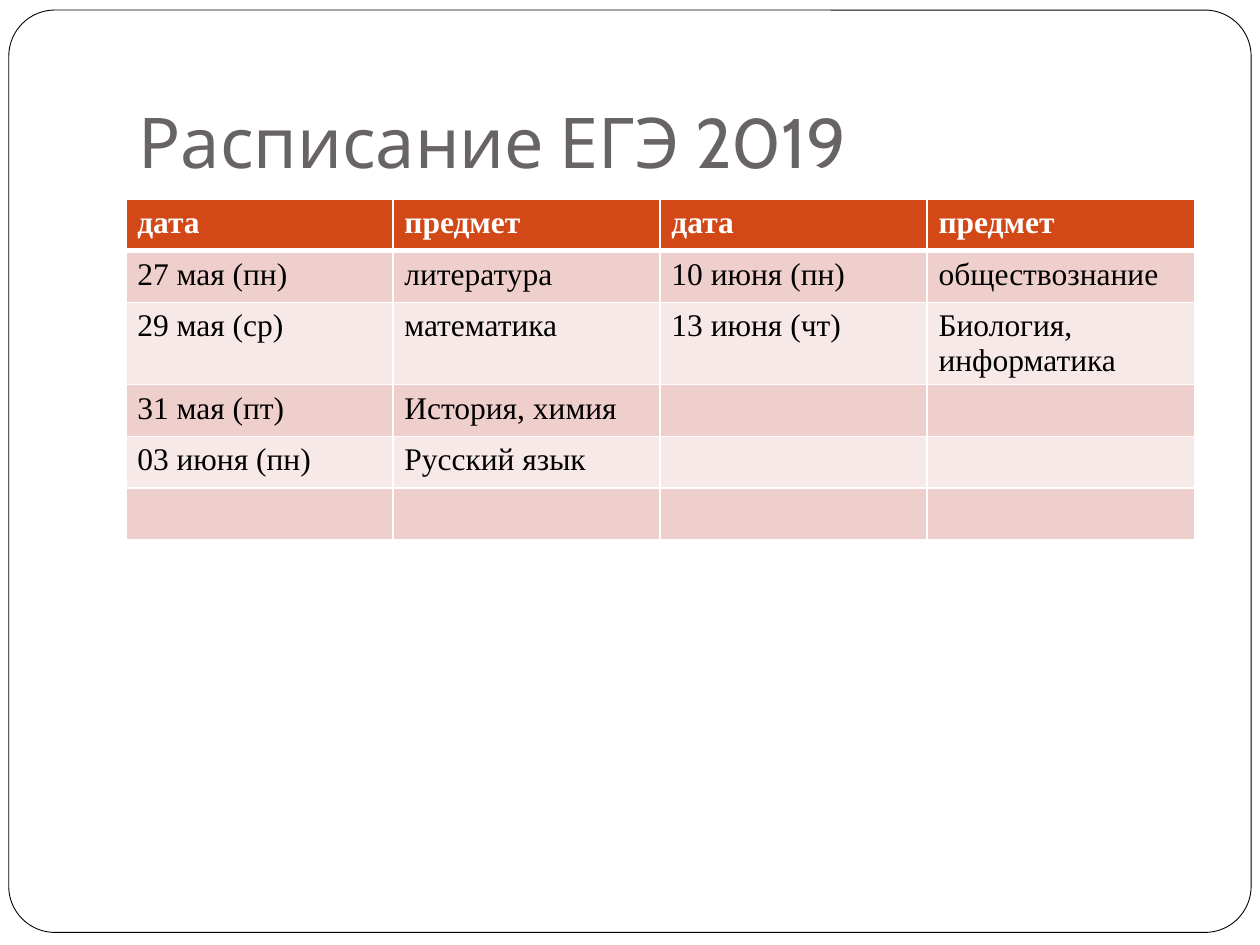
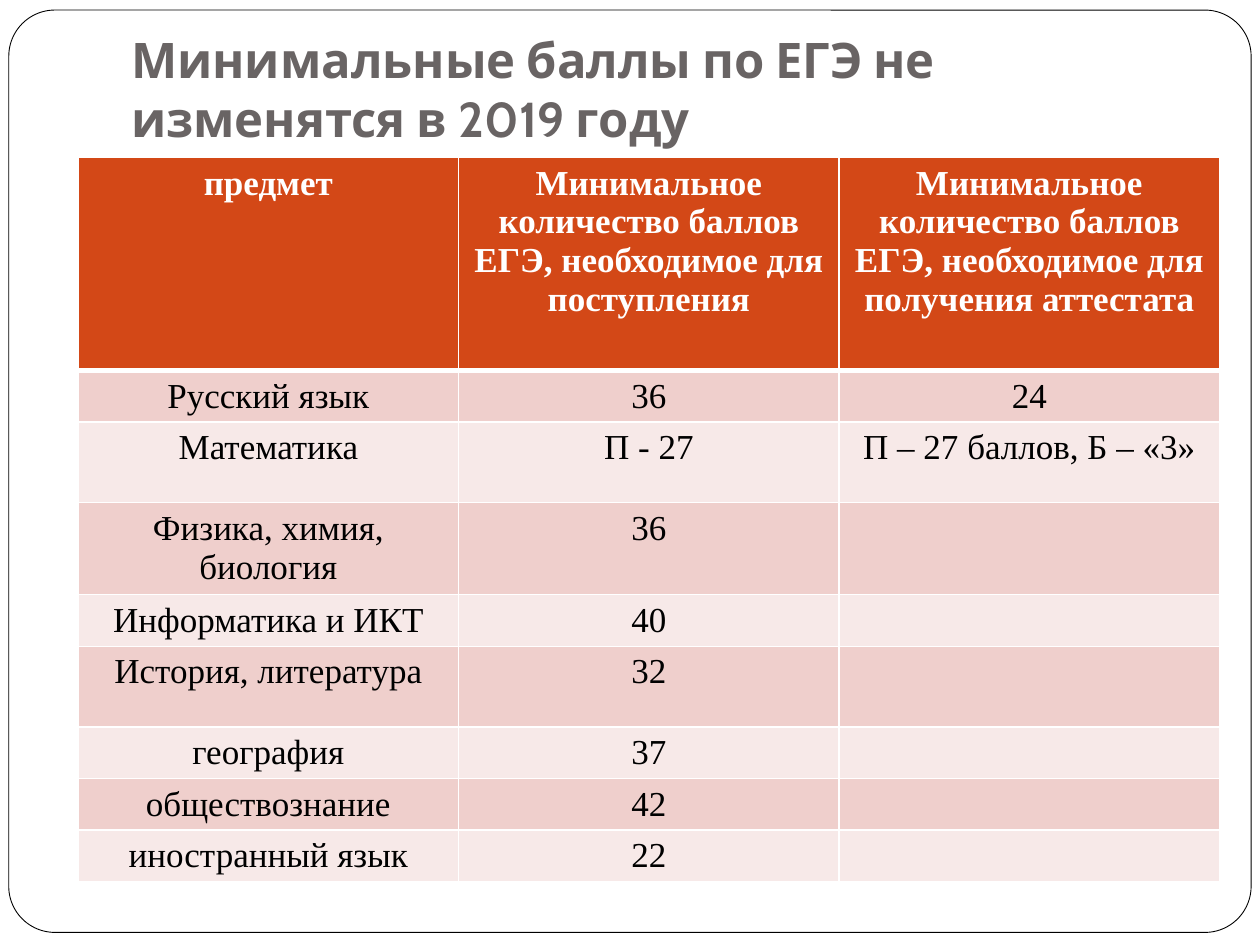
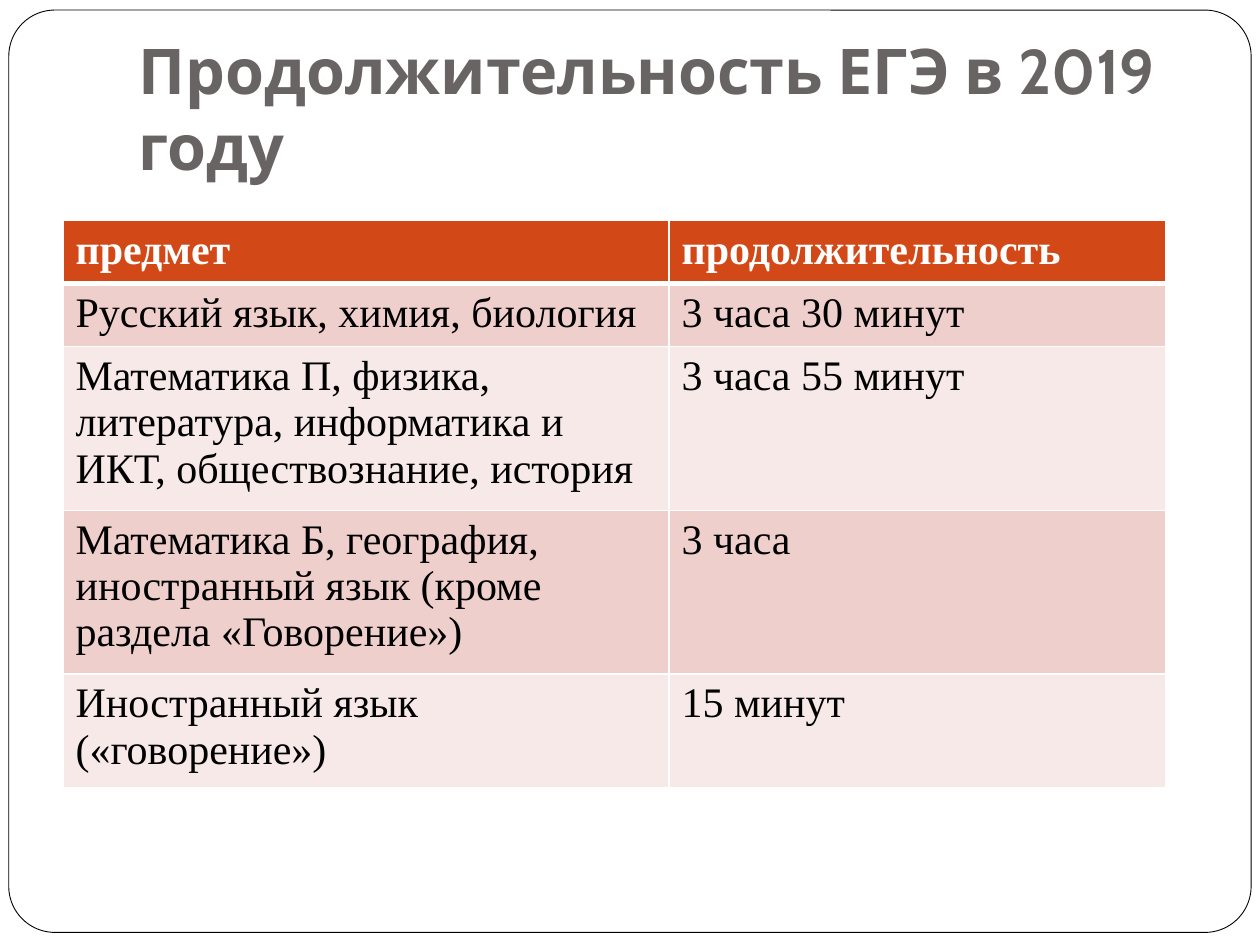
import pptx
import pptx.util
import pptx.dml.color
import pptx.enum.shapes
import pptx.enum.text
import pptx.oxml
import pptx.oxml.ns
from pptx.util import Inches

COLORS = {
    "white": "FFFFFF",
    "outline": "000000",
    "title": "696464",
    "header": "D34817",
    "band_dark": "EFCFCC",
    "band_light": "F7E9E8",
    "text": "000000",
}
TITLE_FONT = "Cabin"
TABLE_FONT = "Times New Roman"
LEFT = pptx.enum.text.PP_ALIGN.LEFT
CENTER = pptx.enum.text.PP_ALIGN.CENTER


def rgb(name):
    return pptx.dml.color.RGBColor.from_string(COLORS[name])


class Deck:
    """Shared style and the slide being built."""

    def __init__(self):
        self.prs = pptx.Presentation()
        self.prs.slide_width = Inches(10)
        self.prs.slide_height = Inches(7.5)
        self.slide = None

    def new_slide(self):
        self.slide = self.prs.slides.add_slide(self.prs.slide_layouts[5])
        self.frame()

    def frame(self):
        """Rounded outline behind everything else."""
        frame = self.slide.shapes.add_shape(
            pptx.enum.shapes.MSO_SHAPE.ROUNDED_RECTANGLE,
            Inches(0.07), Inches(0.08), Inches(9.86), Inches(7.32))
        frame.adjustments[0] = 0.05
        frame.shadow.inherit = False
        frame.fill.solid()
        frame.fill.fore_color.rgb = rgb("white")
        frame.line.color.rgb = rgb("outline")
        frame.line.width = pptx.util.Pt(0.5)
        frame.element.getparent().insert(2, frame.element)

    def style_text(self, paragraph, font, size, color, bold, align):
        paragraph.alignment = align
        for run in paragraph.runs:
            run.font.name = font
            run.font.size = pptx.util.Pt(size)
            run.font.bold = bold
            run.font.color.rgb = rgb(color)

    def title(self, text, size, bold=True, box=(1, 0.3, 8.5, 1.25)):
        title = self.slide.shapes.title
        title.left, title.top, title.width, title.height = map(Inches, box)
        body = title.text_frame
        body.text = text
        body.word_wrap = True
        body.auto_size = pptx.enum.text.MSO_AUTO_SIZE.NONE
        body.vertical_anchor = pptx.enum.text.MSO_ANCHOR.BOTTOM
        body.margin_left = body.margin_right = body.margin_bottom = Inches(0.1)
        body.margin_top = Inches(0.05)
        self.style_text(body.paragraphs[0], TITLE_FONT, size, "title", bold, LEFT)

    def borders(self, cell, top, bottom):
        """White cell borders, widths in points."""
        properties = cell._tc.get_or_add_tcPr()
        for side, width in (("L", 1), ("R", 1), ("T", top), ("B", bottom)):
            properties.append(pptx.oxml.parse_xml(
                f'<a:ln{side} {pptx.oxml.ns.nsdecls("a")} w="{pptx.util.Pt(width)}">'
                f'<a:solidFill><a:srgbClr val="{COLORS["white"]}"/></a:solidFill>'
                f'</a:ln{side}>'))

    def table(self, rows, left, top, widths, heights, size, align=LEFT, margin=0.09):
        """Header row and alternating bands; short rows are left blank at the end."""
        table = self.slide.shapes.add_table(
            len(rows), len(widths), Inches(left), Inches(top),
            Inches(sum(widths)), Inches(sum(heights))).table
        for column, width in zip(table.columns, widths):
            column.width = Inches(width)
        for r, (row, height) in enumerate(zip(rows, heights)):
            table.rows[r].height = Inches(height)
            header = r == 0
            fill = "header" if header else "band_dark" if r % 2 else "band_light"
            for c in range(len(widths)):
                cell = table.cell(r, c)
                self.borders(cell, 3 if r == 1 else 1, 3 if header else 1)
                cell.fill.solid()
                cell.fill.fore_color.rgb = rgb(fill)
                cell.margin_left = cell.margin_right = Inches(margin)
                cell.margin_top = cell.margin_bottom = Inches(0.05)
                if c < len(row):
                    cell.text_frame.text = row[c]
                    self.style_text(cell.text_frame.paragraphs[0], TABLE_FONT, size,
                                    "white" if header else "text", header, align)


def main():
    deck = Deck()

    # Exam timetable
    deck.new_slide()
    deck.title("Расписание ЕГЭ 2019", 40, bold=False)
    timetable = [
        ("дата", "предмет", "дата", "предмет"),
        ("27 мая (пн)", "литература", "10 июня (пн)", "обществознание"),
        ("29 мая (ср)", "математика", "13 июня (чт)", "Биология, информатика"),
        ("31 мая (пт)", "История, химия"),
        ("03 июня (пн)", "Русский язык"),
        (),
    ]
    deck.table(timetable, 1, 1.58, [2.12] * 4, [0.41] * 6, 18)

    # Minimum scores
    deck.new_slide()
    deck.title("Минимальные баллы по ЕГЭ не изменятся в 2019 году", 28,
               box=(0.94, 0.16, 8.5, 1.11))
    needed = "Минимальное количество баллов ЕГЭ, необходимое для "
    minimum_scores = [
        ("предмет", needed + "поступления", needed + "получения аттестата"),
        ("Русский язык", "36", "24"),
        ("Математика", "П - 27", "П – 27 баллов, Б – «3»"),
        ("Физика, химия, биология", "36"),
        ("Информатика и ИКТ", "40"),
        ("История, литература", "32"),
        ("география", "37"),
        ("обществознание", "42"),
        ("иностранный язык", "22"),
    ]
    deck.table(minimum_scores, 0.62, 1.25, [3.02] * 3,
               [1.69, 0.41, 0.64, 0.73, 0.41, 0.64] + [0.41] * 3, 20, CENTER)

    # Exam duration
    deck.new_slide()
    deck.title("Продолжительность ЕГЭ в 2019 году", 36)
    durations = [
        ("предмет", "продолжительность"),
        ("Русский язык, химия, биология", "3 часа 30 минут"),
        ("Математика П, физика, литература, информатика и ИКТ, "
         "обществознание, история", "3 часа 55 минут"),
        ("Математика Б, география, иностранный язык "
         "(кроме раздела «Говорение»)", "3 часа"),
        ("Иностранный язык («говорение»)", "15 минут"),
    ]
    deck.table(durations, 0.5, 1.75, [4.81, 3.94], [0.5, 0.5, 1.3, 1.3, 0.9], 24,
               margin=0.1)

    deck.prs.save("out.pptx")


if __name__ == "__main__":
    main()
